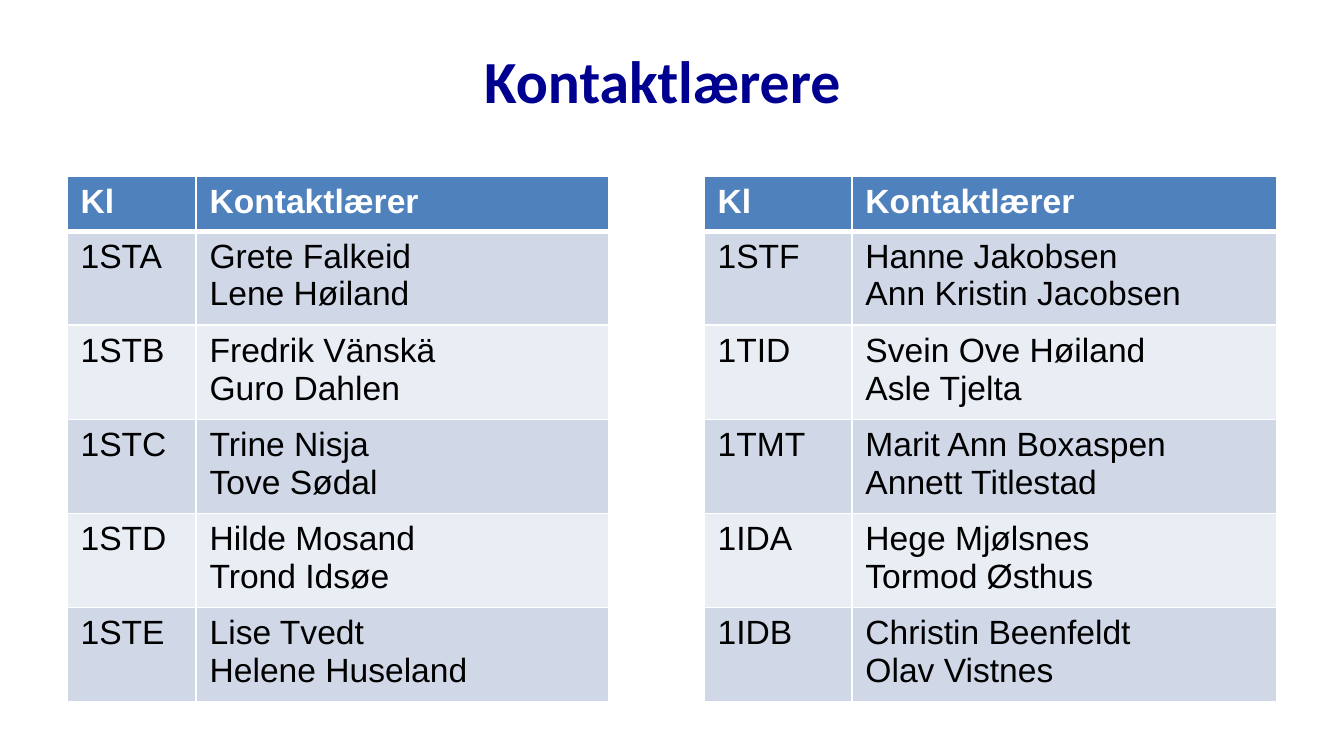
from lxml import etree
from pptx import Presentation
from pptx import util as u
from pptx.dml.color import RGBColor
from pptx.enum import text
from pptx.oxml.ns import qn

HEADER = ("Kl", "Kontaktlærer")
LEFT_CLASSES = [
    ("1STA", "Grete Falkeid\nLene Høiland"),
    ("1STB", "Fredrik Vänskä\nGuro Dahlen"),
    ("1STC", "Trine Nisja\nTove Sødal"),
    ("1STD", "Hilde Mosand\nTrond Idsøe"),
    ("1STE", "Lise Tvedt\nHelene Huseland"),
]
RIGHT_CLASSES = [
    ("1STF", "Hanne Jakobsen\nAnn Kristin Jacobsen"),
    ("1TID", "Svein Ove Høiland\nAsle Tjelta"),
    ("1TMT", "Marit Ann Boxaspen\nAnnett Titlestad"),
    ("1IDA", "Hege Mjølsnes\nTormod Østhus"),
    ("1IDB", "Christin Beenfeldt\nOlav Vistnes"),
]
COL_WIDTHS = (0.96, 3.07, 0.71, 1.1, 3.16)
GAP_COL = 2
MIN_ROW_HEIGHT = 0.41
HEADER_FILL, BANDS = "4F81BD", ("D0D8E8", "E9EDF4")


def color(value):
    return RGBColor.from_string(value)


def style_text(tf, font, size, value, bold):
    for p in tf.paragraphs:
        for r in p.runs:
            r.font.name, r.font.size, r.font.bold = font, u.Pt(size), bold
            r.font.color.rgb = color(value)


def set_borders(cell, bottom, top):
    """Draw white cell borders; top and bottom widths are in points."""
    tc_pr = cell._tc.get_or_add_tcPr()
    for i, (side, width) in enumerate((("L", 1), ("R", 1), ("T", top), ("B", bottom))):
        ln = etree.Element(qn(f"a:ln{side}"), w=str(u.Pt(width)))
        fill = etree.SubElement(ln, qn("a:solidFill"))
        etree.SubElement(fill, qn("a:srgbClr"), val="FFFFFF")
        tc_pr.insert(i, ln)


def add_title(s, x, y, w, h):
    tf = s.shapes.add_textbox(*map(u.Inches, (x, y, w, h))).text_frame
    tf.word_wrap = True
    tf.vertical_anchor = text.MSO_ANCHOR.MIDDLE
    tf.margin_right, tf.margin_bottom = u.Inches(0.24), u.Inches(0.27)
    tf.text = "Kontaktlærere"
    tf.paragraphs[0].alignment = text.PP_ALIGN.CENTER
    style_text(tf, "Calibri", 32, "000090", True)


def add_teacher_table(s, x, y, w, h):
    """Rows start at their minimum height and grow with two-line cells."""
    rows = [HEADER + ("",) + HEADER]
    rows += [a + ("",) + b for a, b in zip(LEFT_CLASSES, RIGHT_CLASSES)]
    frame = s.shapes.add_table(len(rows), len(COL_WIDTHS), *map(u.Inches, (x, y, w, h)))
    table = frame.table
    for col, width in zip(table.columns, COL_WIDTHS):
        col.width = u.Inches(width)
    for i, values in enumerate(rows):
        is_header = i == 0
        table.rows[i].height = u.Inches(MIN_ROW_HEIGHT)
        for j, value in enumerate(values):
            cell = table.cell(i, j)
            if j == GAP_COL:
                cell.fill.background()
            else:
                cell.fill.solid()
                cell.fill.fore_color.rgb = color(HEADER_FILL if is_header else BANDS[(i - 1) % 2])
                cell.text_frame.text = value
                style_text(cell.text_frame, "Arial", 18,
                           "FFFFFF" if is_header else "000000", is_header)
            set_borders(cell, bottom=3 if is_header else 1, top=3 if i == 1 else 1)
    frame.height = u.Inches(h)


def main():
    prs = Presentation()
    prs.slide_width = u.Inches(10)
    prs.slide_height = prs.slide_width * 9 // 16
    s = prs.slides.add_slide(prs.slide_layouts[6])
    add_title(s, 0.5, 0.23, 9, 0.94)
    add_teacher_table(s, 0.5, 1.31, 9, 3.41)
    prs.save("out.pptx")


if __name__ == "__main__":
    main()
